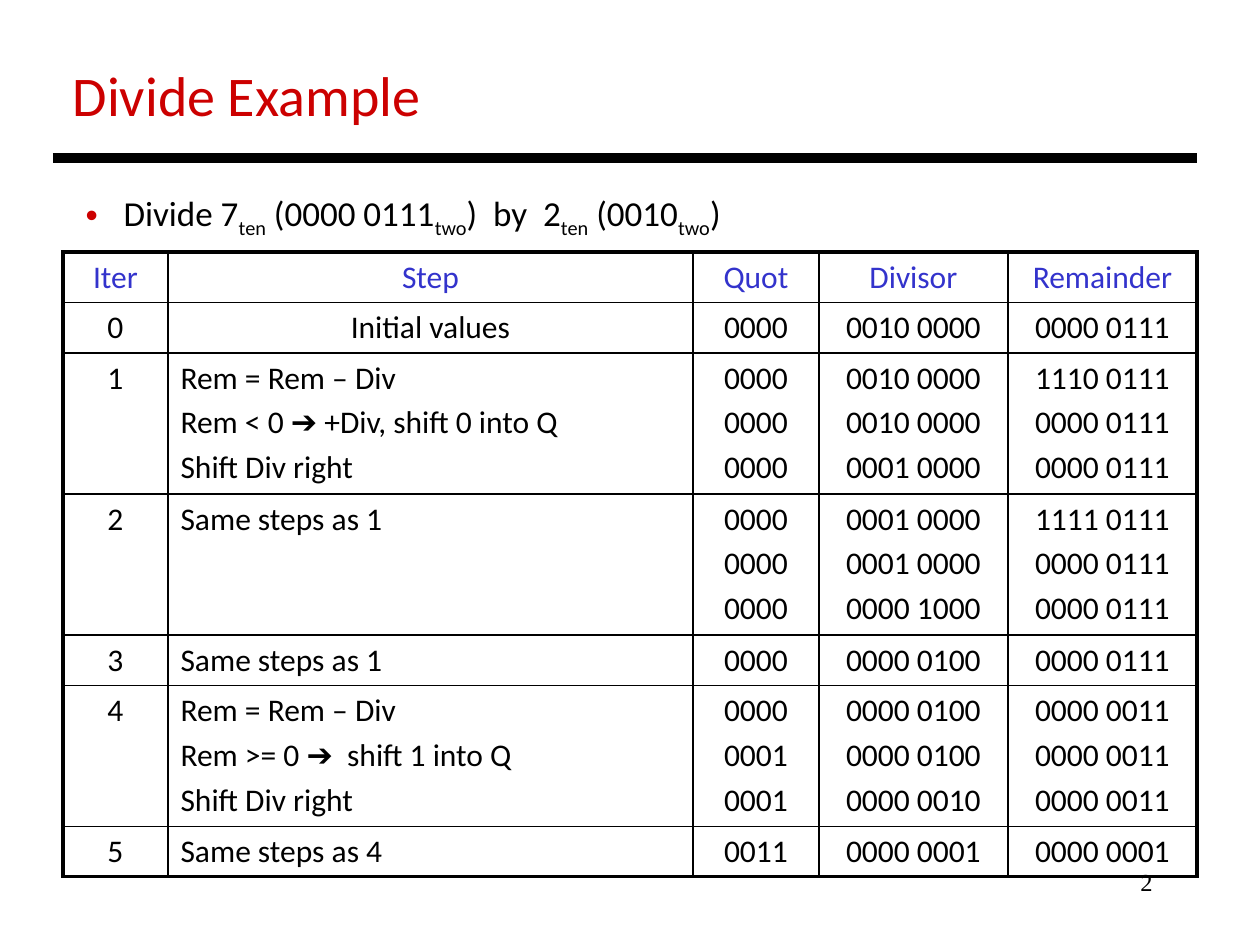
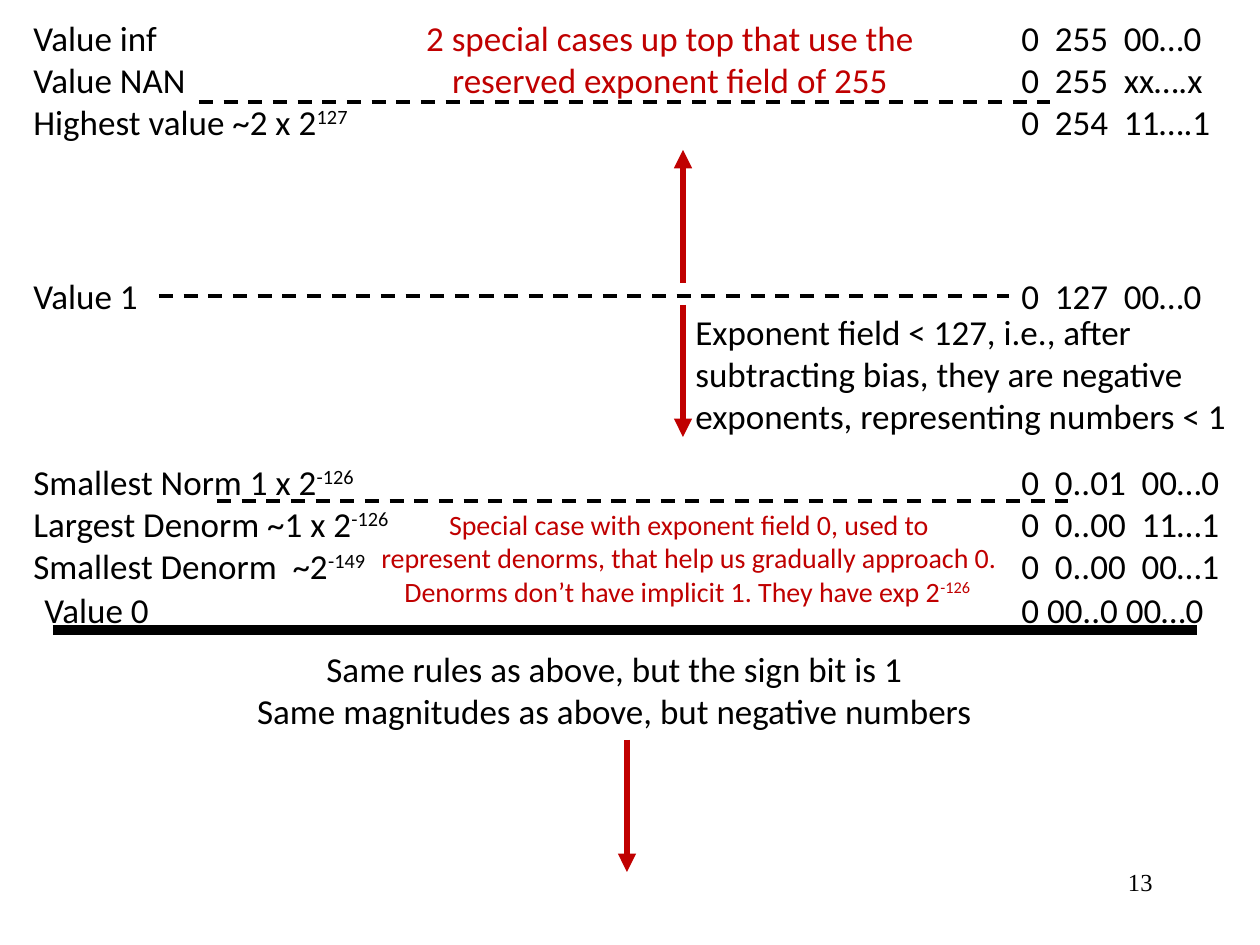
from lxml import etree
from pptx import Presentation
from pptx.dml.color import RGBColor
from pptx.enum.dml import MSO_LINE
from pptx.enum.shapes import MSO_CONNECTOR
from pptx.enum.text import MSO_ANCHOR, MSO_AUTO_SIZE, PP_ALIGN
from pptx.oxml.ns import qn
from pptx.util import Emu, Pt

LEFT, CENTER, RIGHT = PP_ALIGN.LEFT, PP_ALIGN.CENTER, PP_ALIGN.RIGHT
TOP = MSO_ANCHOR.TOP
NO_AUTOFIT = MSO_AUTO_SIZE.NONE
STRAIGHT = MSO_CONNECTOR.STRAIGHT
DASH = MSO_LINE.DASH

PX_PER_INCH = 126
COLORS = {
    "text": "000000",
    "title": "CC0000",
    "accent": "C00000",
    "header": "3333CC",
}
BODY_FONT, NUMBER_FONT = "Calibri", "Times New Roman"
SUBSCRIPT, SUPERSCRIPT = -25, 30
LEFT_SIDE = 1
TITLE_AND_CONTENT, BLANK = 1, 6

COLUMN_WIDTHS = [105, 525, 126, 189, 189]
LINE_ROW, BLOCK_ROW = 50, 141
DIVIDE_ROWS = [
    ["Iter", "Step", "Quot", "Divisor", "Remainder"],
    ["0", "Initial values", "0000", "0010 0000", "0000 0111"],
    ["1", "Rem = Rem – Div\nRem < 0 ➔ +Div, shift 0 into Q\nShift Div right",
     "0000\n0000\n0000", "0010 0000\n0010 0000\n0001 0000",
     "1110 0111\n0000 0111\n0000 0111"],
    ["2", "Same steps as 1", "0000\n0000\n0000",
     "0001 0000\n0001 0000\n0000 1000", "1111 0111\n0000 0111\n0000 0111"],
    ["3", "Same steps as 1", "0000", "0000 0100", "0000 0111"],
    ["4", "Rem = Rem – Div\nRem >= 0 ➔  shift 1 into Q\nShift Div right",
     "0000\n0001\n0001", "0000 0100\n0000 0100\n0000 0010",
     "0000 0011\n0000 0011\n0000 0011"],
    ["5", "Same steps as 4", "0011", "0000 0001", "0000 0001"],
]


def px(value):
    return Emu(round(value * 914400 / PX_PER_INCH))


def rgb(name):
    return RGBColor.from_string(COLORS[name])


def write_text(frame, text, size=20, color="text", font=BODY_FONT, align=LEFT,
               baseline=SUPERSCRIPT, gap=0):
    """Lines split at newlines; every second part between bars is shifted."""
    for index, line in enumerate(text.split("\n")):
        paragraph = frame.add_paragraph() if index else frame.paragraphs[0]
        paragraph.alignment = align
        paragraph.space_before = Pt(gap if index else 0)
        for position, part in enumerate(line.split("|")):
            run = paragraph.add_run()
            run.text = part
            run.font.size = Pt(size)
            run.font.name = font
            run.font.color.rgb = rgb(color)
            if position % 2:
                run._r.get_or_add_rPr().set("baseline", str(baseline * 1000))


class Deck:
    def __init__(self):
        self.presentation = Presentation()
        self.presentation.slide_width = px(1260)
        self.presentation.slide_height = px(945)
        self.slide = None

    def add_slide(self, layout, number, rule_y):
        layouts = self.presentation.slide_layouts
        self.slide = self.presentation.slides.add_slide(layouts[layout])
        self.text(number, 903, 861, 262, 63, size=14, font=NUMBER_FONT, align=RIGHT)
        self.line(53, rule_y, 1197, rule_y, width=6)

    def text(self, text, left, top, width, height, **text_format):
        shape = self.slide.shapes.add_textbox(px(left), px(top), px(width), px(height))
        shape.text_frame.word_wrap = False
        write_text(shape.text_frame, text, **text_format)
        return shape

    def placeholder(self, index, text, left, top, width, height, **text_format):
        shape = self.slide.placeholders[index]
        shape.left, shape.top = px(left), px(top)
        shape.width, shape.height = px(width), px(height)
        frame = shape.text_frame
        frame.word_wrap = False
        frame.auto_size = NO_AUTOFIT
        frame.vertical_anchor = TOP
        write_text(frame, text, **text_format)
        return shape

    def bullets(self, text, left, top, width, height, indent, **text_format):
        shape = self.placeholder(1, text, left, top, width, height, **text_format)
        for paragraph in shape.text_frame.paragraphs:
            properties = paragraph._p.get_or_add_pPr()
            properties.set("marL", str(px(indent)))
            properties.set("indent", str(-px(indent)))
            bullet_color = etree.SubElement(properties, qn("a:buClr"))
            etree.SubElement(bullet_color, qn("a:srgbClr"), val=COLORS["title"])
            etree.SubElement(properties, qn("a:buChar"), char="•")

    def line(self, x1, y1, x2, y2, color="text", width=2, dash=None, arrow=False):
        connector = self.slide.shapes.add_connector(
            STRAIGHT, px(x1), px(y1), px(x2), px(y2))
        connector.line.color.rgb = rgb(color)
        connector.line.width = Pt(width)
        if dash:
            connector.line.dash_style = dash
        properties = connector._element.spPr
        if arrow:
            etree.SubElement(properties.find(qn("a:ln")), qn("a:tailEnd"), type="triangle")
        etree.SubElement(properties, qn("a:effectLst"))
        return connector

    def arrow(self, x, start, end):
        self.line(x, start, x, end, color="accent", width=3.5, arrow=True)

    def borders(self, cell, widths):
        properties = cell._tc.get_or_add_tcPr()
        for side, width in widths.items():
            border = etree.SubElement(properties, qn("a:ln" + side), w=str(Pt(width)))
            fill = etree.SubElement(border, qn("a:solidFill"))
            etree.SubElement(fill, qn("a:srgbClr"), val=COLORS["text"])

    def table(self, rows, left, top, column_widths, outer=2.25, inner=1):
        heights = [BLOCK_ROW if "\n" in row[2] else LINE_ROW for row in rows]
        last_row, last_column = len(rows) - 1, len(column_widths) - 1
        table = self.slide.shapes.add_table(
            len(rows), len(column_widths), px(left), px(top),
            px(sum(column_widths)), px(sum(heights))).table
        table.first_row = table.horz_banding = False
        for column, width in zip(table.columns, column_widths):
            column.width = px(width)
        for row_index, values in enumerate(rows):
            table.rows[row_index].height = px(heights[row_index])
            for column_index, value in enumerate(values):
                cell = table.cell(row_index, column_index)
                is_step = column_index == 1 and row_index > 1
                write_text(cell.text_frame, value, size=18, gap=3.6,
                           color="text" if row_index else "header",
                           align=LEFT if is_step else CENTER)
                self.borders(cell, {
                    "L": inner if column_index else outer,
                    "R": outer if column_index == last_column else inner,
                    "T": inner if row_index else outer,
                    "B": outer if row_index == last_row else inner,
                })
                cell.fill.background()


def build_divide_example(deck):
    deck.add_slide(TITLE_AND_CONTENT, "2", 158)
    deck.placeholder(0, "Divide Example", 60, 54, 377, 81, size=32, color="title")
    deck.bullets(" Divide 7|ten| (0000 0111|two|)  by  2|ten| (0010|two|)",
                 73, 185, 670, 55, indent=30, baseline=SUBSCRIPT)
    deck.table(DIVIDE_ROWS, 63, 252, COLUMN_WIDTHS)


def build_value_ranges(deck):
    deck.add_slide(BLANK, "13", 630)
    label_x, bits_x = 21, 1009
    deck.text("0 00..0 00…0", bits_x, 582, 209, 56)
    deck.text("Value 0", 32, 582, 131, 56)
    deck.text("Value 1", label_x, 268, 131, 56)
    one_bits = deck.text("0  127  00…0", bits_x, 268, 207, 56)

    deck.text("Value inf\nValue NAN\nHighest value ~2 x 2|127", label_x, 10, 347, 140)
    deck.text("0  255  00…0\n0  255  xx….x\n0  254  11….1", bits_x, 10, 215, 140)
    deck.text("Smallest Norm 1 x 2|-126\nLargest Denorm ~1 x 2|-126\n"
              "Smallest Denorm  ~2|-149", label_x, 454, 389, 140)
    deck.text("0  0..01  00…0\n0  0..00  11…1\n0  0..00  00…1", bits_x, 454, 224, 140)

    one_line = deck.line(159, 296, bits_x, 296, dash=DASH)
    one_line.end_connect(one_bits, LEFT_SIDE)
    for x, y in [(199, 102), (217, 501)]:
        deck.line(x, y, x + 851, y, dash=DASH)

    deck.text("Same rules as above, but the sign bit is 1\n"
              "Same magnitudes as above, but negative numbers",
              242, 641, 745, 97, align=CENTER)
    for x, start, end in [(627, 740, 872), (683, 305, 437), (683, 283, 150)]:
        deck.arrow(x, start, end)
    deck.text("Exponent field < 127, i.e., after\nsubtracting bias, they are negative\n"
              "exponents, representing numbers < 1", 683, 304, 562, 140)
    deck.text("2 special cases up top that use the\nreserved exponent field of 255",
              411, 10, 518, 97, color="accent", align=CENTER)
    deck.text("Special case with exponent field 0, used to\n"
              "represent denorms, that help us gradually approach 0.\n"
              "Denorms don’t have implicit 1. They have exp 2|-126 ",
              365, 501, 648, 115, size=16, color="accent", align=CENTER)


def main():
    deck = Deck()
    build_divide_example(deck)
    build_value_ranges(deck)
    deck.presentation.save("out.pptx")


if __name__ == "__main__":
    main()
